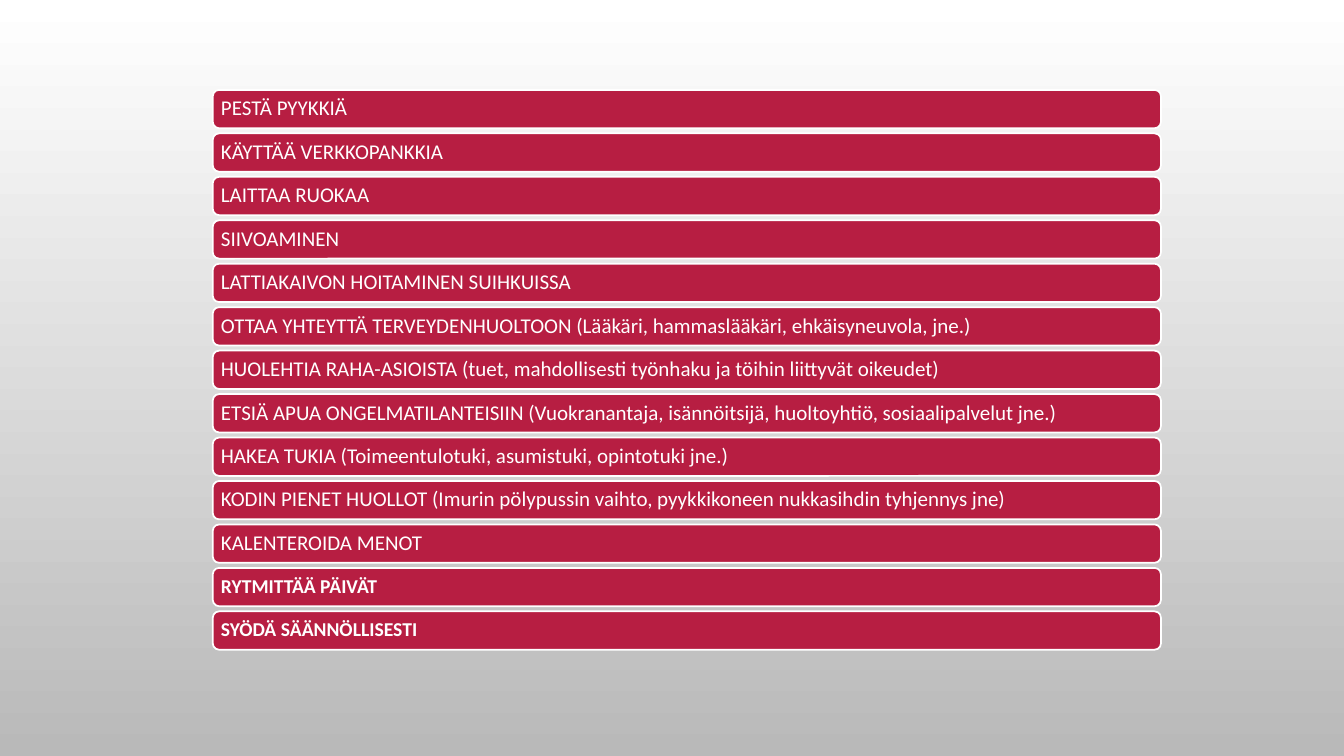
"""Build a slide listing everyday independent-living skills as stacked bars."""
from pptx import Presentation
from pptx.dml.color import RGBColor
from pptx.enum.shapes import MSO_SHAPE
from pptx.enum.text import MSO_ANCHOR, PP_ALIGN
from pptx.util import Pt

ROUNDED = MSO_SHAPE.ROUNDED_RECTANGLE
MIDDLE = MSO_ANCHOR.MIDDLE
LEFT = PP_ALIGN.LEFT

SKILLS = [
    "PESTÄ PYYKKIÄ",
    "KÄYTTÄÄ VERKKOPANKKIA",
    "LAITTAA RUOKAA",
    "SIIVOAMINEN",
    "LATTIAKAIVON HOITAMINEN SUIHKUISSA",
    "OTTAA YHTEYTTÄ TERVEYDENHUOLTOON (Lääkäri, hammaslääkäri, ehkäisyneuvola, jne.)",
    "HUOLEHTIA RAHA-ASIOISTA (tuet, mahdollisesti työnhaku ja töihin liittyvät oikeudet)",
    "ETSIÄ APUA ONGELMATILANTEISIIN (Vuokranantaja, isännöitsijä, huoltoyhtiö, sosiaalipalvelut jne.)",
    "HAKEA TUKIA (Toimeentulotuki, asumistuki, opintotuki jne.)",
    "KODIN PIENET HUOLLOT (Imurin pölypussin vaihto, pyykkikoneen nukkasihdin tyhjennys jne)",
    "KALENTEROIDA MENOT",
]
ROUTINES = ["RYTMITTÄÄ PÄIVÄT", "SYÖDÄ SÄÄNNÖLLISESTI"]

THEME = {
    "background": ("FFFFFF", "B9B9B9"),
    "bar": RGBColor.from_string("B71E42"),
    "text": RGBColor.from_string("FFFFFF"),
    "font": "Calibri",
    "skill_size": Pt(15),
    "routine_size": Pt(14),
}
SLIDE_WIDTH, SLIDE_HEIGHT = 960, 540
BAR_LEFT, BAR_TOP, BAR_WIDTH, BAR_HEIGHT = 152, 64.2, 677.3, 27.4
BAR_PITCH = 31.04
INSET = Pt(4.5)

FRAME_FORMAT = {
    "word_wrap": True,
    "vertical_anchor": MIDDLE,
    "margin_left": INSET,
    "margin_top": INSET,
    "margin_right": INSET,
    "margin_bottom": INSET,
}
PARAGRAPH_FORMAT = {"alignment": LEFT, "line_spacing": 0.9}
SKILL_FONT = {"name": THEME["font"], "size": THEME["skill_size"], "bold": False}
ROUTINE_FONT = {"name": THEME["font"], "size": THEME["routine_size"], "bold": True}


def apply_format(target, values):
    """Set every named attribute on the target."""
    for name, value in values.items():
        setattr(target, name, value)


def paint_background(slide):
    """Fill the slide with a gradient running from top to bottom."""
    fill = slide.background.fill
    fill.gradient()
    fill.gradient_angle = 270
    for stop, color in zip(fill.gradient_stops, THEME["background"]):
        stop.color.rgb = RGBColor.from_string(color)


def add_bar(slide, row, text, font_format):
    """Add one labelled bar at the given row."""
    top = BAR_TOP + row * BAR_PITCH
    shape = slide.shapes.add_shape(
        ROUNDED, Pt(BAR_LEFT), Pt(top), Pt(BAR_WIDTH), Pt(BAR_HEIGHT)
    )
    shape.shadow.inherit = False
    shape.fill.solid()
    shape.fill.fore_color.rgb = THEME["bar"]
    shape.line.color.rgb = THEME["text"]
    shape.line.width = Pt(1.25)
    apply_format(shape.text_frame, FRAME_FORMAT)
    paragraph = shape.text_frame.paragraphs[0]
    apply_format(paragraph, PARAGRAPH_FORMAT)
    run = paragraph.add_run()
    run.text = text
    apply_format(run.font, font_format)
    run.font.color.rgb = THEME["text"]


def main():
    """Create and save the presentation."""
    presentation = Presentation()
    presentation.slide_width = Pt(SLIDE_WIDTH)
    presentation.slide_height = Pt(SLIDE_HEIGHT)
    slide = presentation.slides.add_slide(presentation.slide_layouts[6])
    paint_background(slide)
    bars = [(text, SKILL_FONT) for text in SKILLS]
    bars += [(text, ROUTINE_FONT) for text in ROUTINES]
    for row, (text, font_format) in enumerate(bars):
        add_bar(slide, row, text, font_format)
    presentation.save("out.pptx")


if __name__ == "__main__":
    main()
